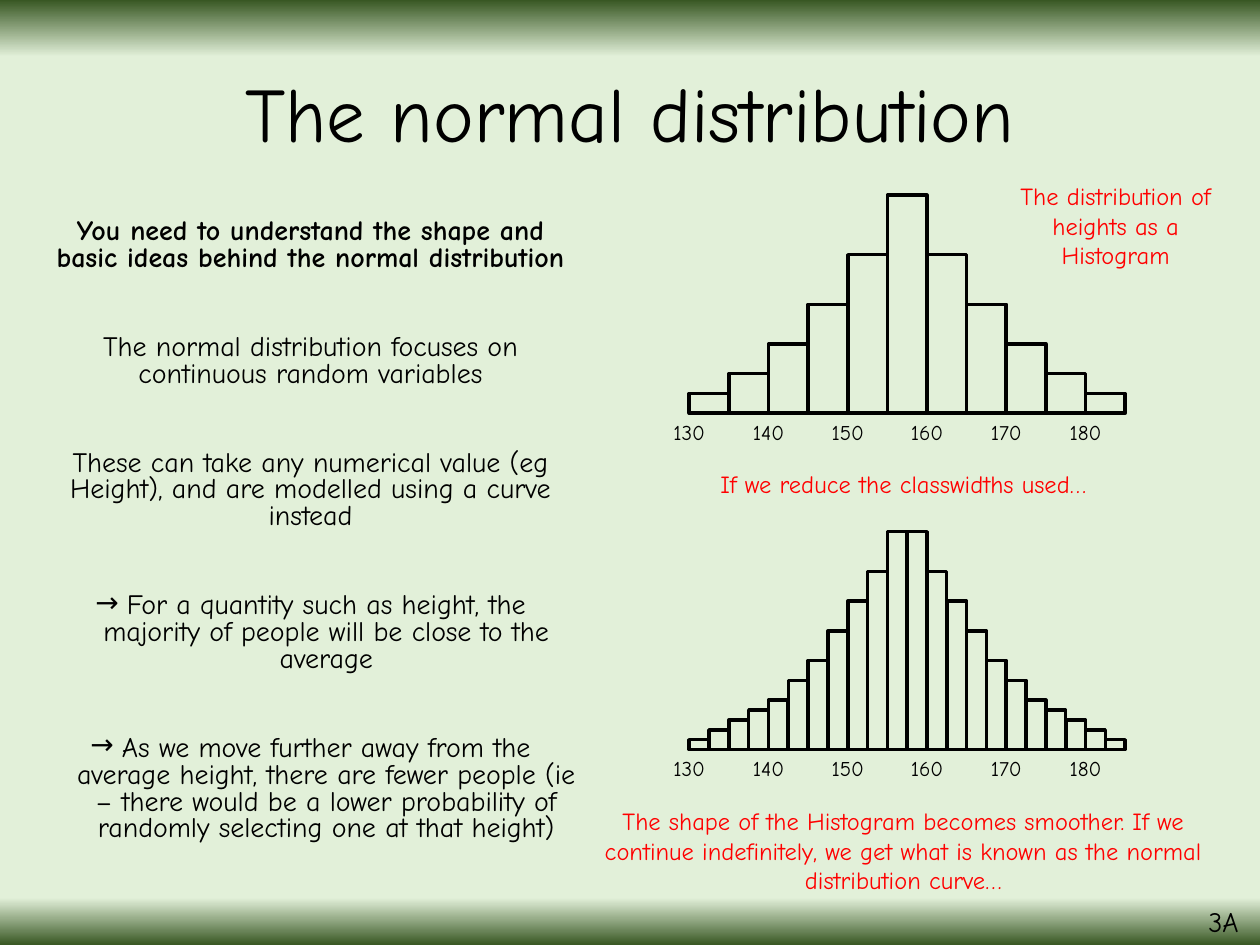
from dataclasses import dataclass, field

from lxml.etree import SubElement
from pptx import Presentation
from pptx.dml.color import RGBColor
from pptx.enum.shapes import MSO_SHAPE
from pptx.enum.text import MSO_ANCHOR, MSO_AUTO_SIZE, PP_ALIGN
from pptx.oxml.ns import qn
from pptx.slide import Slide
from pptx.util import Inches, Pt

FONT = "Comic Neue"
COLORS = {"text": "000000", "note": "FF0000", "edge": "385723", "page": "E2F0D9"}
GRADIENT = [(0, "edge"), (6, "page"), (95, "page"), (100, "edge")]

CHART_LEFT, CHART_WIDTH, CHART_HEIGHT = 5.47, 3.46, 1.73
LABELS = range(130, 181, 10)
RANGE_START, RANGE_END = 130, 185
LABEL_WIDTH, LABEL_HEIGHT = 0.48, 0.3


@dataclass
class Para:
    text: str
    bold: bool = False
    bullet: str = ""
    format: dict = field(default_factory=dict)


@dataclass
class TextBlock:
    box: tuple[float, float, float, float]
    paras: list[Para]
    size: float = 14
    color: str = "note"
    frame: dict = field(default_factory=dict)


@dataclass
class Histogram:
    base: float
    frequencies: list[int]


def body_para(text: str, before: float = 35.4, **options) -> Para:
    return Para(text, format={"line_spacing": 0.8, "space_before": Pt(before)}, **options)


GROW = {"auto_size": MSO_AUTO_SIZE.SHAPE_TO_FIT_TEXT}

MAIN_TEXT = [
    TextBlock(
        (0.69, 0.21, 8.62, 1.45),
        [Para("The normal distribution", format={"line_spacing": 0.9})],
        44, "text", {"vertical_anchor": MSO_ANCHOR.MIDDLE},
    ),
    TextBlock(
        (0.25, 1.69, 4.43, 5.81),
        [
            body_para("You need to understand the shape and basic ideas behind "
                      "the normal distribution", 10, bold=True),
            body_para("The normal distribution focuses on continuous random variables"),
            body_para("These can take any numerical value (eg Height), and are "
                      "modelled using a curve instead"),
            body_para("For a quantity such as height, the majority of people will "
                      "be close to the average", bullet="→"),
            body_para("As we move further away from the average height, there are "
                      "fewer people (ie – there would be a lower probability of "
                      "randomly selecting one at that height)", bullet="→"),
        ],
        16, "text",
    ),
    TextBlock(
        (9.42, 7.16, 0.58, 0.34),
        [Para("3A", format={"line_spacing": 0.9, "space_before": Pt(10)})],
        16, "text",
    ),
]

NOTES = [
    TextBlock((7.91, 1.39, 1.89, 0.81),
              [Para("The distribution of heights as a Histogram")], frame=GROW),
    TextBlock((5.16, 3.67, 4.02, 0.34),
              [Para("If we reduce the classwidths used…")], frame=GROW),
    TextBlock((4.69, 6.35, 4.96, 0.81),
              [Para("The shape of the Histogram becomes smoother. If we continue "
                    "indefinitely, we get what is known as the normal distribution "
                    "curve…")], frame=GROW),
]

WIDE_RISE = [2, 4, 7, 11, 16]
NARROW_RISE = [1, 2, 3, 4, 5, 7, 9, 12, 15, 18, 22]
HISTOGRAMS = [
    Histogram(3.28, WIDE_RISE + [22] + WIDE_RISE[::-1]),
    Histogram(5.95, NARROW_RISE + NARROW_RISE[::-1]),
]


def rgb(name: str) -> RGBColor:
    return RGBColor.from_string(COLORS[name])


def set_format(target: object, values: dict) -> None:
    for name, value in values.items():
        setattr(target, name, value)


def fill_background(s: Slide) -> None:
    """Fade the page from dark bands at the top and bottom edges."""
    fill = s.background.fill
    fill.gradient()
    fill.gradient_angle = 270
    stops = s.element.find(".//" + qn("a:gsLst"))
    for stop in list(stops):
        stops.remove(stop)
    for percent, color in GRADIENT:
        stop = SubElement(stops, qn("a:gs"), pos=str(percent * 1000))
        SubElement(stop, qn("a:srgbClr"), val=COLORS[color])


def add_bullet(p, char: str) -> None:
    """Give the paragraph a bullet with a hanging indent."""
    pPr = p._p.get_or_add_pPr()
    pPr.set("marL", str(Inches(0.25)))
    pPr.set("indent", str(-Inches(0.25)))
    SubElement(pPr, qn("a:buFont"), typeface=FONT)
    SubElement(pPr, qn("a:buChar"), char=char)


def add_text(s: Slide, block: TextBlock) -> None:
    tf = s.shapes.add_textbox(*map(Inches, block.box)).text_frame
    set_format(tf, {"word_wrap": True, **block.frame})
    for i, para in enumerate(block.paras):
        p = tf.add_paragraph() if i else tf.paragraphs[0]
        set_format(p, {"alignment": PP_ALIGN.CENTER, **para.format})
        if para.bullet:
            add_bullet(p, para.bullet)
        r = p.add_run()
        r.text = para.text
        set_format(r.font, {"name": FONT, "size": Pt(block.size), "bold": para.bold})
        r.font.color.rgb = rgb(block.color)


def add_bars(s: Slide, chart: Histogram) -> None:
    width = CHART_WIDTH / len(chart.frequencies)
    unit = CHART_HEIGHT / max(chart.frequencies)
    for i, frequency in enumerate(chart.frequencies):
        height = frequency * unit
        box = (CHART_LEFT + i * width, chart.base - height, width, height)
        sp = s.shapes.add_shape(MSO_SHAPE.RECTANGLE, *map(Inches, box))
        sp.shadow.inherit = False
        sp.fill.background()
        sp.line.color.rgb = rgb("text")
        sp.line.width = Pt(2)


def add_axis_labels(s: Slide, chart: Histogram) -> None:
    scale = CHART_WIDTH / (RANGE_END - RANGE_START)
    for value in LABELS:
        left = CHART_LEFT + (value - RANGE_START) * scale - LABEL_WIDTH / 2
        box = (left, chart.base, LABEL_WIDTH, LABEL_HEIGHT)
        add_text(s, TextBlock(box, [Para(str(value))], 12, "text",
                              {"word_wrap": False, **GROW}))


def main() -> None:
    prs = Presentation()
    prs.slide_width, prs.slide_height = Inches(10), Inches(7.5)
    s = prs.slides.add_slide(prs.slide_layouts[6])
    fill_background(s)
    for block in MAIN_TEXT:
        add_text(s, block)
    for draw in (add_bars, add_axis_labels):
        for chart in HISTOGRAMS:
            draw(s, chart)
    for block in NOTES:
        add_text(s, block)
    prs.save("out.pptx")


if __name__ == "__main__":
    main()
